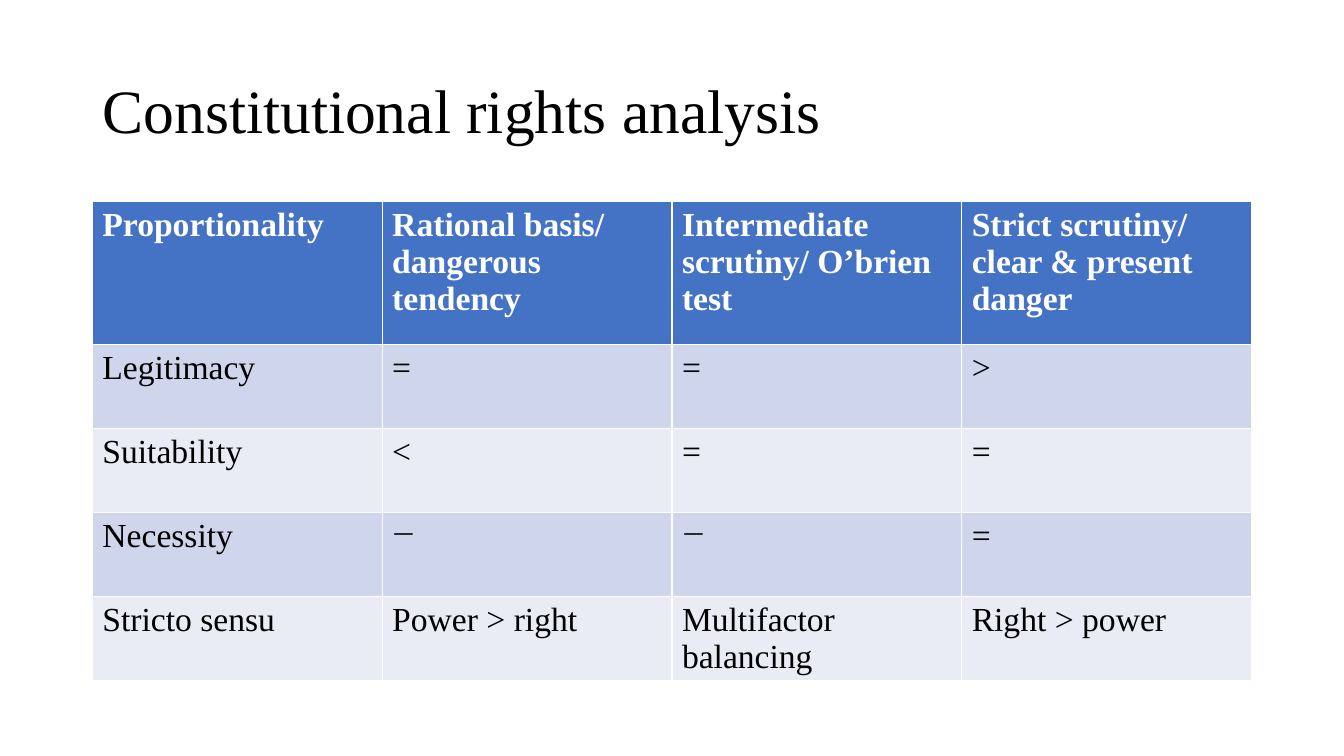
from dataclasses import dataclass

from pptx import Presentation
from pptx.dml.color import RGBColor as Rgb
from pptx.enum.text import MSO_ANCHOR as Anchor, PP_ALIGN as Align
from pptx.util import Pt

COLOURS = {
    "ink": "000000",
    "header_text": "FFFFFF",
    "header": "4472C4",
    "band_dark": "CFD5EA",
    "band_light": "E9EBF5",
}
SERIF = "Times New Roman"
DASH = "—"
LEFT, COLUMN_WIDTH = 66, 207


@dataclass(frozen=True)
class Standard:
    """One row of the table: its texts, height and colours."""
    texts: tuple[str, ...]
    fill: str
    height: float = 60
    ink: str = "ink"
    bold: bool = False


STANDARDS = [
    Standard(
        ("Proportionality", "Rational basis/ dangerous tendency",
         "Intermediate scrutiny/ O’brien test",
         "Strict scrutiny/ clear & present danger"),
        "header", 102, "header_text", True),
    Standard(("Legitimacy", "=", "=", ">"), "band_dark"),
    Standard(("Suitability", "<", "=", "="), "band_light"),
    Standard(("Necessity", DASH, DASH, "="), "band_dark"),
    Standard(("Stricto sensu", "Power > right", "Multifactor balancing",
              "Right > power"), "band_light"),
]


def colour(name: str) -> Rgb:
    return Rgb.from_string(COLOURS[name])


def add_run(paragraph, text: str, size: float, font: str = SERIF,
            ink: str = "ink", bold: bool = False) -> None:
    run = paragraph.add_run()
    run.text = text
    run.font.size = Pt(size)
    run.font.name = font
    run.font.bold = bold
    run.font.color.rgb = colour(ink)


def add_heading(slide, text: str) -> None:
    heading = slide.shapes.title
    heading.left, heading.top = Pt(LEFT), Pt(28.75)
    heading.width, heading.height = Pt(4 * COLUMN_WIDTH), Pt(104.4)
    heading.text_frame.vertical_anchor = Anchor.MIDDLE
    paragraph = heading.text_frame.paragraphs[0]
    paragraph.alignment = Align.LEFT
    paragraph.line_spacing = 0.9
    add_run(paragraph, text, 44)


def add_comparison(slide, standards: list[Standard]) -> None:
    column_count = len(standards[0].texts)
    # The default table style supplies the white cell borders
    comparison = slide.shapes.add_table(
        len(standards), column_count, Pt(LEFT), Pt(144),
        Pt(column_count * COLUMN_WIDTH),
        Pt(sum(standard.height for standard in standards))).table
    for row, standard in zip(comparison.rows, standards):
        row.height = Pt(standard.height)
        for cell, text in zip(row.cells, standard.texts):
            cell.fill.solid()
            cell.fill.fore_color.rgb = colour(standard.fill)
            size, font = (18, "Calibri") if text == DASH else (24, SERIF)
            add_run(cell.text_frame.paragraphs[0], text, size, font,
                    standard.ink, standard.bold)


def main() -> None:
    deck = Presentation()
    deck.slide_width, deck.slide_height = Pt(960), Pt(540)
    slide = deck.slides.add_slide(deck.slide_layouts[5])

    # Title
    add_heading(slide, "Constitutional rights analysis")

    # Levels of scrutiny against the steps of proportionality
    add_comparison(slide, STANDARDS)

    deck.save("out.pptx")


if __name__ == "__main__":
    main()
